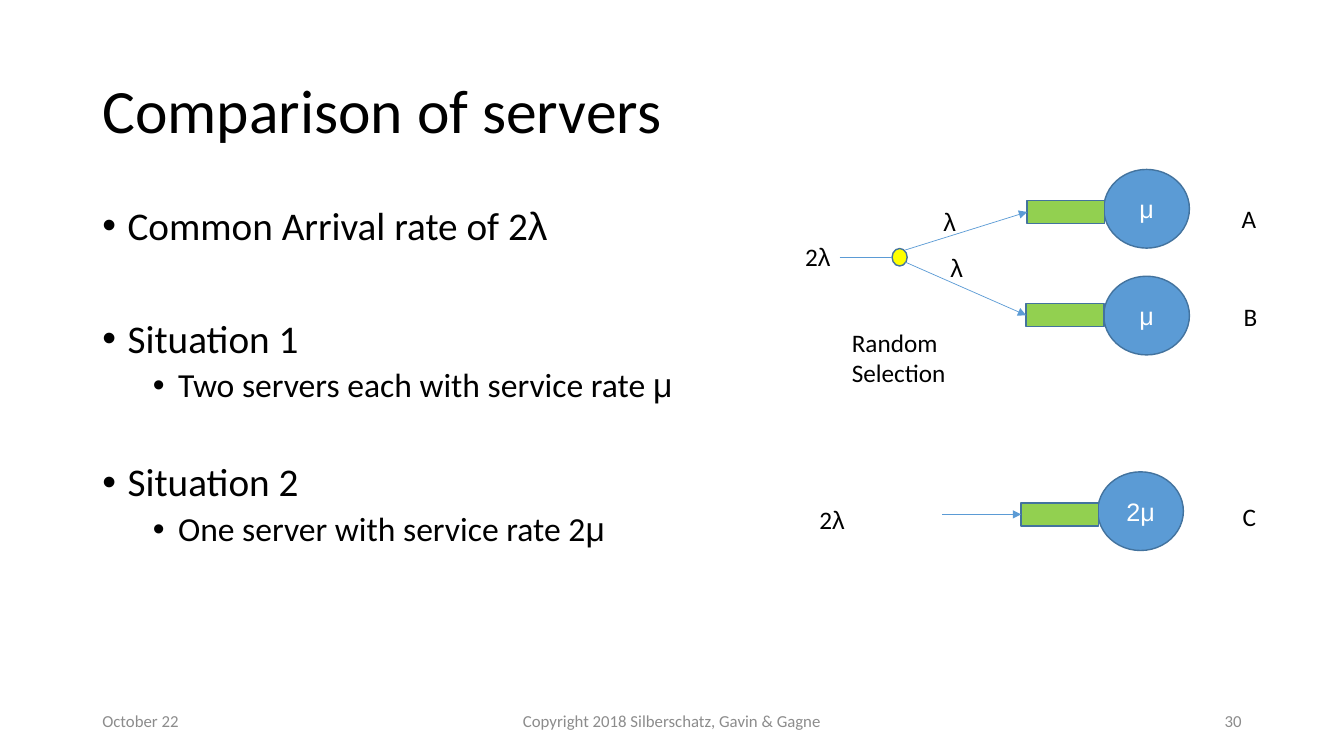
from itertools import groupby

from lxml.etree import SubElement
from pptx import Presentation
from pptx.dml.color import RGBColor
from pptx.enum.shapes import MSO_CONNECTOR, MSO_SHAPE
from pptx.enum.text import MSO_ANCHOR, MSO_AUTO_SIZE, PP_ALIGN
from pptx.oxml.ns import qn
from pptx.util import Pt

BLACK = RGBColor(0x00, 0x00, 0x00)
WHITE = RGBColor(0xFF, 0xFF, 0xFF)
GRAY = RGBColor(0x8C, 0x8C, 0x8C)
BLUE = RGBColor(0x5B, 0x9B, 0xD5)
OUTLINE = RGBColor(0x43, 0x73, 0x9E)
GREEN = RGBColor(0x92, 0xD0, 0x50)
YELLOW = RGBColor(0xFF, 0xFF, 0x00)

# Text, level, space before
BULLETS = [
    ("Common Arrival rate of 2λ", 0, 0),
    ("Situation 1", 0, 50.5),
    ("Two servers each with service rate μ", 1, 5),
    ("Situation 2", 0, 41.5),
    ("One server with service rate 2μ", 1, 5),
]
BULLET_SIZES = (28, 24)
BULLET_INDENTS = (18, 54)

# Left, width, text, alignment
FOOTERS = [
    (66, 216, "October 22", PP_ALIGN.LEFT),
    (318, 324, "Copyright 2018 Silberschatz, Gavin & Gagne", PP_ALIGN.CENTER),
    (678, 216, "30", PP_ALIGN.RIGHT),
]

# Circle left and top, queue left and top, service rate
SERVERS = [
    (788.4, 121, 733.7, 143.3, "μ"),
    (788.4, 197.3, 733, 216.7, "μ"),
    (784.1, 337, 729.4, 359.3, "2μ"),
]

# Start x, start y, end x, end y, arrowhead
FLOWS = [
    (599.8, 183.9, 637.2, 183.9, False),
    (646.6, 178.6, 733.7, 151.4, True),
    (646.6, 187.2, 733, 225.2, True),
    (673.2, 367.4, 729.4, 367.4, True),
]

# Left, top, width, lines
LABELS = [
    (568.1, 168.8, 33.8, ["2λ"]),
    (578.2, 356.5, 42.5, ["2λ"]),
    (601.4, 230.4, 82.1, ["Random", "Selection"]),
    (666.7, 144, 24.5, ["λ"]),
    (671.8, 176.6, 24.5, ["λ"]),
    (879.8, 142, 25.2, ["A"]),
    (881.3, 211.8, 25.2, ["B"]),
    (880.6, 354.4, 24.5, ["C"]),
]


def is_greek(letter):
    return letter in "λμ"


class SlideBuilder:
    text_font = "Calibri"
    symbol_font = "Arial"

    def __init__(self, slide):
        self.slide = slide

    def fill_paragraph(self, paragraph, text, size, color, font=text_font):
        """Fill a paragraph, giving Greek letters the symbol font."""
        paragraph.font.name = font
        paragraph.font.size = Pt(size)
        paragraph.font.color.rgb = color
        for greek, letters in groupby(text, is_greek):
            run = paragraph.add_run()
            run.text = "".join(letters)
            if greek:
                run.font.name = self.symbol_font

    def place(self, shape, left, top, width, height):
        shape.left, shape.top = Pt(left), Pt(top)
        shape.width, shape.height = Pt(width), Pt(height)

    def title(self, text):
        title = self.slide.shapes.title
        self.place(title, 66, 28.75, 828, 104.4)
        title.text_frame.vertical_anchor = MSO_ANCHOR.MIDDLE
        paragraph = title.text_frame.paragraphs[0]
        paragraph.alignment = PP_ALIGN.LEFT
        paragraph.line_spacing = 0.9
        self.fill_paragraph(paragraph, text, 44, BLACK)

    def bullets(self, items):
        body = self.slide.placeholders[1]
        self.place(body, 66, 143.75, 433.5, 342.6)
        frame = body.text_frame
        frame.auto_size = MSO_AUTO_SIZE.NONE
        for index, (text, level, space_before) in enumerate(items):
            paragraph = frame.add_paragraph() if index else frame.paragraphs[0]
            paragraph.level = level
            properties = paragraph._p.get_or_add_pPr()
            properties.set("marL", str(Pt(BULLET_INDENTS[level])))
            properties.set("indent", str(Pt(-18)))
            SubElement(properties, qn("a:buFont")).set("typeface", "Arial")
            SubElement(properties, qn("a:buChar")).set("char", "•")
            paragraph.line_spacing = 0.9
            paragraph.space_before = Pt(space_before)
            self.fill_paragraph(paragraph, text, BULLET_SIZES[level], BLACK)

    def footer(self, left, width, text, alignment):
        box = self.slide.shapes.add_textbox(Pt(left), Pt(500.5), Pt(width), Pt(28.75))
        frame = box.text_frame
        frame.word_wrap = True
        frame.vertical_anchor = MSO_ANCHOR.MIDDLE
        frame.paragraphs[0].alignment = alignment
        self.fill_paragraph(frame.paragraphs[0], text, 12, GRAY)

    def label(self, left, top, width, lines):
        height = 7.2 + 22 * len(lines)
        box = self.slide.shapes.add_textbox(Pt(left), Pt(top), Pt(width), Pt(height))
        frame = box.text_frame
        frame.word_wrap = False
        for index, line in enumerate(lines):
            paragraph = frame.add_paragraph() if index else frame.paragraphs[0]
            self.fill_paragraph(paragraph, line, 18, BLACK)

    def shape(self, kind, left, top, width, height, fill):
        shape = self.slide.shapes.add_shape(
            kind, Pt(left), Pt(top), Pt(width), Pt(height))
        shape.shadow.inherit = False
        shape.fill.solid()
        shape.fill.fore_color.rgb = fill
        shape.line.color.rgb = OUTLINE
        shape.line.width = Pt(1)
        return shape

    def server(self, left, top, queue_left, queue_top, rate):
        """Draw a service circle with its waiting queue."""
        circle = self.shape(MSO_SHAPE.OVAL, left, top, 61.2, 56.2, BLUE)
        frame = circle.text_frame
        frame.vertical_anchor = MSO_ANCHOR.MIDDLE
        frame.paragraphs[0].alignment = PP_ALIGN.CENTER
        self.fill_paragraph(frame.paragraphs[0], rate, 18, WHITE, self.symbol_font)
        self.shape(MSO_SHAPE.RECTANGLE, queue_left, queue_top, 55.5, 16.6, GREEN)

    def flow(self, start_x, start_y, end_x, end_y, arrowhead):
        connector = self.slide.shapes.add_connector(
            MSO_CONNECTOR.STRAIGHT, Pt(start_x), Pt(start_y), Pt(end_x), Pt(end_y))
        connector.line.color.rgb = BLUE
        connector.line.width = Pt(0.5)
        properties = connector._element.spPr
        if arrowhead:
            line = properties.find(qn("a:ln"))
            SubElement(line, qn("a:tailEnd")).set("type", "triangle")
        SubElement(properties, qn("a:effectLst"))


def main():
    presentation = Presentation()
    presentation.slide_width = Pt(960)
    presentation.slide_height = Pt(540)
    slide = presentation.slides.add_slide(presentation.slide_layouts[1])
    builder = SlideBuilder(slide)

    builder.title("Comparison of servers")
    builder.bullets(BULLETS)
    for footer in FOOTERS:
        builder.footer(*footer)
    for server in SERVERS:
        builder.server(*server)
    builder.shape(MSO_SHAPE.OVAL, 637.2, 177.5, 10.8, 12.5, YELLOW)
    for flow in FLOWS:
        builder.flow(*flow)
    for label in LABELS:
        builder.label(*label)

    presentation.save("out.pptx")


if __name__ == "__main__":
    main()
